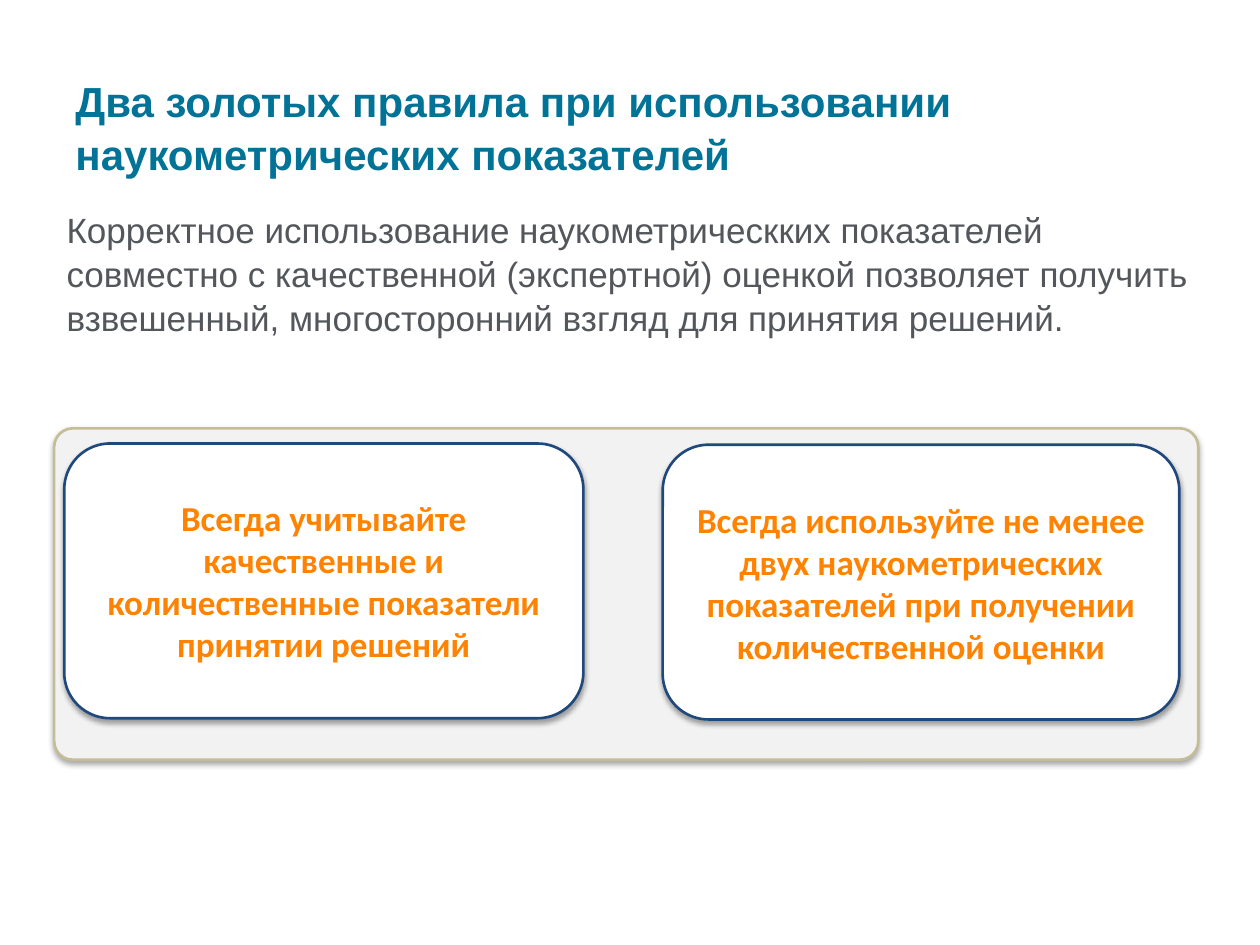
"""Build a slide with two golden rules for using scientometric indicators."""
import dataclasses

import lxml.etree
import pptx
import pptx.dml.color
import pptx.enum.shapes
import pptx.enum.text
import pptx.oxml.ns
import pptx.shapes.autoshape
import pptx.slide
import pptx.util

Inches = pptx.util.Inches
Pt = pptx.util.Pt


@dataclasses.dataclass(frozen=True)
class TextStyle:
    font: str
    size: float
    color: str
    bold: bool = False
    line_spacing: float = 1.0


@dataclasses.dataclass(frozen=True)
class Theme:
    title: TextStyle = TextStyle("Arial", 24, "007397", True, 1.05)
    body: TextStyle = TextStyle("Arial", 20, "53565A", False, 1.05)
    rule: TextStyle = TextStyle("Calibri", 20, "FF8200", True)
    panel_fill: str = "F2F2F2"
    panel_line: str = "C4BD97"
    rule_fill: str = "FFFFFF"
    rule_line: str = "1F497D"
    line_width: float = 1.5
    shadow: str = "000000"


@dataclasses.dataclass(frozen=True)
class Box:
    left: float
    top: float
    width: float
    height: float

    def lengths(self) -> tuple[pptx.util.Length, ...]:
        return tuple(Inches(value) for value in dataclasses.astuple(self))


@dataclasses.dataclass(frozen=True)
class Rule:
    box: Box
    text: str


THEME = Theme()
PANEL = Box(0.43, 3.4, 9.08, 2.63)
RULES = (
    Rule(
        Box(0.51, 3.52, 4.12, 2.18),
        "Всегда учитывайте качественные и количественные показатели принятии решений",
    ),
    Rule(
        Box(5.26, 3.53, 4.1, 2.18),
        "Всегда используйте не менее двух наукометрических показателей при получении количественной оценки",
    ),
)


def color(value: str) -> pptx.dml.color.RGBColor:
    return pptx.dml.color.RGBColor.from_string(value)


def write_text(
    shape: pptx.shapes.autoshape.Shape,
    text: str,
    style: TextStyle,
    anchor: pptx.enum.text.MSO_ANCHOR,
    alignment: pptx.enum.text.PP_ALIGN = pptx.enum.text.PP_ALIGN.LEFT,
    space_after: float = 0,
) -> None:
    frame = shape.text_frame
    frame.word_wrap = True
    frame.vertical_anchor = anchor
    paragraph = frame.paragraphs[0]
    paragraph.alignment = alignment
    paragraph.line_spacing = style.line_spacing
    paragraph.space_after = Pt(space_after)
    run = paragraph.add_run()
    run.text = text
    run.font.name = style.font
    run.font.size = Pt(style.size)
    run.font.bold = style.bold
    run.font.color.rgb = color(style.color)


def add_shadow(shape: pptx.shapes.autoshape.Shape) -> None:
    shape.shadow.inherit = False
    qn = pptx.oxml.ns.qn
    effects = shape.element.spPr.find(qn("a:effectLst"))
    outer = lxml.etree.SubElement(
        effects,
        qn("a:outerShdw"),
        blurRad=str(Pt(3.1)),
        dist=str(Pt(1.8)),
        dir="5400000",
        rotWithShape="0",
    )
    tint = lxml.etree.SubElement(outer, qn("a:srgbClr"), val=THEME.shadow)
    lxml.etree.SubElement(tint, qn("a:alpha"), val="35000")


def add_card(
    slide: pptx.slide.Slide, box: Box, fill: str, line: str
) -> pptx.shapes.autoshape.Shape:
    shape = slide.shapes.add_shape(
        pptx.enum.shapes.MSO_SHAPE.ROUNDED_RECTANGLE, *box.lengths()
    )
    shape.fill.solid()
    shape.fill.fore_color.rgb = color(fill)
    shape.line.color.rgb = color(line)
    shape.line.width = Pt(THEME.line_width)
    add_shadow(shape)
    return shape


def add_rule(slide: pptx.slide.Slide, rule: Rule) -> None:
    shape = add_card(slide, rule.box, THEME.rule_fill, THEME.rule_line)
    write_text(
        shape,
        rule.text,
        THEME.rule,
        pptx.enum.text.MSO_ANCHOR.MIDDLE,
        pptx.enum.text.PP_ALIGN.CENTER,
        space_after=3,
    )


def main() -> None:
    presentation = pptx.Presentation()
    presentation.slide_width = Inches(10)
    presentation.slide_height = Inches(7.5)
    slide = presentation.slides.add_slide(presentation.slide_layouts[6])

    title = slide.shapes.add_textbox(*Box(0.5, 0.77, 9.01, 0.46).lengths())
    write_text(
        title,
        "Два золотых правила при использовании наукометрических показателей",
        THEME.title,
        pptx.enum.text.MSO_ANCHOR.MIDDLE,
    )

    body = slide.shapes.add_textbox(*Box(0.43, 1.64, 9.01, 5.36).lengths())
    frame = body.text_frame
    frame.margin_left = Inches(0.1)
    frame.margin_top = frame.margin_right = frame.margin_bottom = Inches(0)
    write_text(
        body,
        "Корректное использование наукометрическких показателей совместно с "
        "качественной (экспертной) оценкой позволяет получить взвешенный, "
        "многосторонний взгляд для принятия решений.",
        THEME.body,
        pptx.enum.text.MSO_ANCHOR.TOP,
    )

    panel = add_card(slide, PANEL, THEME.panel_fill, THEME.panel_line)
    panel.adjustments[0] = 0.056
    for rule in RULES:
        add_rule(slide, rule)

    presentation.save("out.pptx")


if __name__ == "__main__":
    main()
